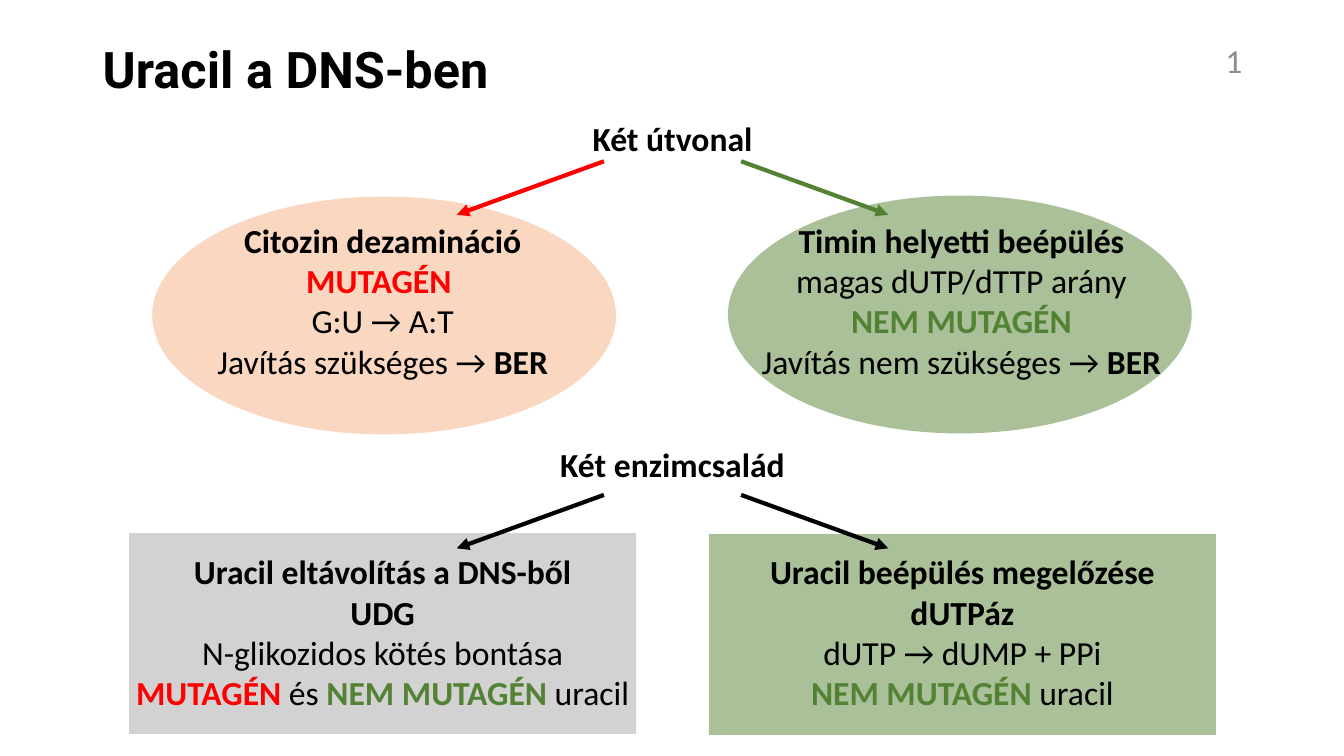
from dataclasses import dataclass

from lxml import etree
from pptx import Presentation
from pptx import util as u
from pptx.dml.color import RGBColor
from pptx.enum import shapes, text
from pptx.oxml.ns import qn

SCALE = 9144  # EMU in one px, with 100 px to the inch
COLOURS = {
    "ink": "000000",
    "red": "FF0000",
    "green": "548235",
    "orange": "F4B183",
    "grey": "A6A6A6",
    "number": "8C8C8C",
}


@dataclass
class Span:
    words: str
    bold: bool = False
    colour: str = "ink"


@dataclass
class Panel:
    kind: shapes.MSO_SHAPE
    area: tuple[int, int, int, int]
    fill: str


@dataclass
class Arrow:
    start: tuple[int, int]
    end: tuple[int, int]
    colour: str


@dataclass
class Block:
    area: tuple[int, int, int, int]
    lines: list[list[Span]]


def px(*values: int) -> list[u.Emu]:
    return [u.Emu(value * SCALE) for value in values]


def rgb(name: str) -> RGBColor:
    return RGBColor.from_string(COLOURS[name])


def add_panel(page, panel: Panel) -> None:
    shape = page.shapes.add_shape(panel.kind, *px(*panel.area))
    shape.shadow.inherit = False
    shape.line.fill.background()
    shape.fill.solid()
    shape.fill.fore_color.rgb = rgb(panel.fill)
    colour = shape.fill._xPr.find(qn("a:solidFill"))[0]
    etree.SubElement(colour, qn("a:alpha"), val="50000")


def add_arrow(page, arrow: Arrow) -> None:
    line = page.shapes.add_connector(
        shapes.MSO_CONNECTOR.STRAIGHT, *px(*arrow.start, *arrow.end))
    line.line.color.rgb = rgb(arrow.colour)
    line.line.width = u.Pt(3)
    etree.SubElement(line.line._get_or_add_ln(), qn("a:tailEnd"), type="triangle")
    etree.SubElement(line._element.spPr, qn("a:effectLst"))


def add_text(page, area: tuple[int, int, int, int], lines: list[list[Span]], *,
             size: int = 24, font: str = "Calibri",
             align=text.PP_ALIGN.CENTER, anchor=text.MSO_ANCHOR.TOP,
             spacing: float = 1.0) -> None:
    frame = page.shapes.add_textbox(*px(*area)).text_frame
    frame.word_wrap = True
    frame.vertical_anchor = anchor
    for index, line in enumerate(lines):
        para = frame.add_paragraph() if index else frame.paragraphs[0]
        para.alignment = align
        para.line_spacing = spacing
        for span in line:
            run = para.add_run()
            run.text = span.words
            run.font.name = font
            run.font.size = u.Pt(size)
            run.font.bold = span.bold
            run.font.color.rgb = rgb(span.colour)


OVAL, RECT = shapes.MSO_SHAPE.OVAL, shapes.MSO_SHAPE.RECTANGLE
PANELS = [
    Panel(OVAL, (151, 195, 460, 236), "orange"),
    Panel(OVAL, (722, 194, 460, 236), "green"),
    Panel(RECT, (128, 529, 503, 199), "grey"),
    Panel(RECT, (703, 530, 503, 199), "green"),
]

HEADINGS = {"Két útvonal": 112, "Két enzimcsalád": 435}

# Each pair of arrows leaves its heading to the left and to the right
ARROWS = [
    Arrow((x, y), (end_x, y + 53), colour)
    for y, colours in ((160, ("red", "green")), (491, ("ink", "ink")))
    for (x, end_x), colour in zip(((599, 453), (735, 881)), colours)
]

BER = Span("BER", True)
BLOCKS = [
    Block((92, 213, 575, 208), [
        [Span("Citozin dezamináció", True)],
        [Span("MUTAGÉN ", True, "red")],
        [Span("G:U → A:T")],
        [Span("Javítás szükséges → "), BER],
    ]),
    Block((666, 213, 575, 208), [
        [Span("Timin helyetti beépülés", True)],
        [Span("magas dUTP/dTTP arány")],
        [Span("NEM MUTAGÉN", True, "green")],
        [Span("Javítás nem szükséges → "), BER],
    ]),
    Block((92, 542, 575, 208), [
        [Span("Uracil eltávolítás a DNS-ből", True)],
        [Span("UDG", True)],
        [Span("N-glikozidos kötés bontása")],
        [Span("MUTAGÉN ", True, "red"), Span("és "),
         Span("NEM MUTAGÉN ", True, "green"), Span("uracil")],
    ]),
    Block((667, 542, 575, 208), [
        [Span("Uracil beépülés megelőzése", True)],
        [Span("dUTPáz", True)],
        [Span("dUTP → dUMP + PPi")],
        [Span("NEM MUTAGÉN ", True, "green"), Span("uracil")],
    ]),
]


def main() -> None:
    deck = Presentation()
    deck.slide_width, deck.slide_height = px(1333, 750)
    page = deck.slides.add_slide(deck.slide_layouts[6])

    # Title and page number
    add_text(page, (92, -1, 1150, 145), [[Span("Uracil a DNS-ben", True)]],
             size=36, font="Roboto", align=text.PP_ALIGN.LEFT,
             anchor=text.MSO_ANCHOR.MIDDLE, spacing=0.9)
    add_text(page, (942, 40, 300, 40), [[Span("1", colour="number")]],
             align=text.PP_ALIGN.RIGHT, anchor=text.MSO_ANCHOR.MIDDLE)

    # Coloured panels, then the text and arrows over them
    for panel in PANELS:
        add_panel(page, panel)
    for heading, top in HEADINGS.items():
        add_text(page, (92, top, 1150, 51), [[Span(heading, True)]])
    for block in BLOCKS:
        add_text(page, block.area, block.lines)
    for arrow in ARROWS:
        add_arrow(page, arrow)

    deck.save("out.pptx")


if __name__ == "__main__":
    main()
